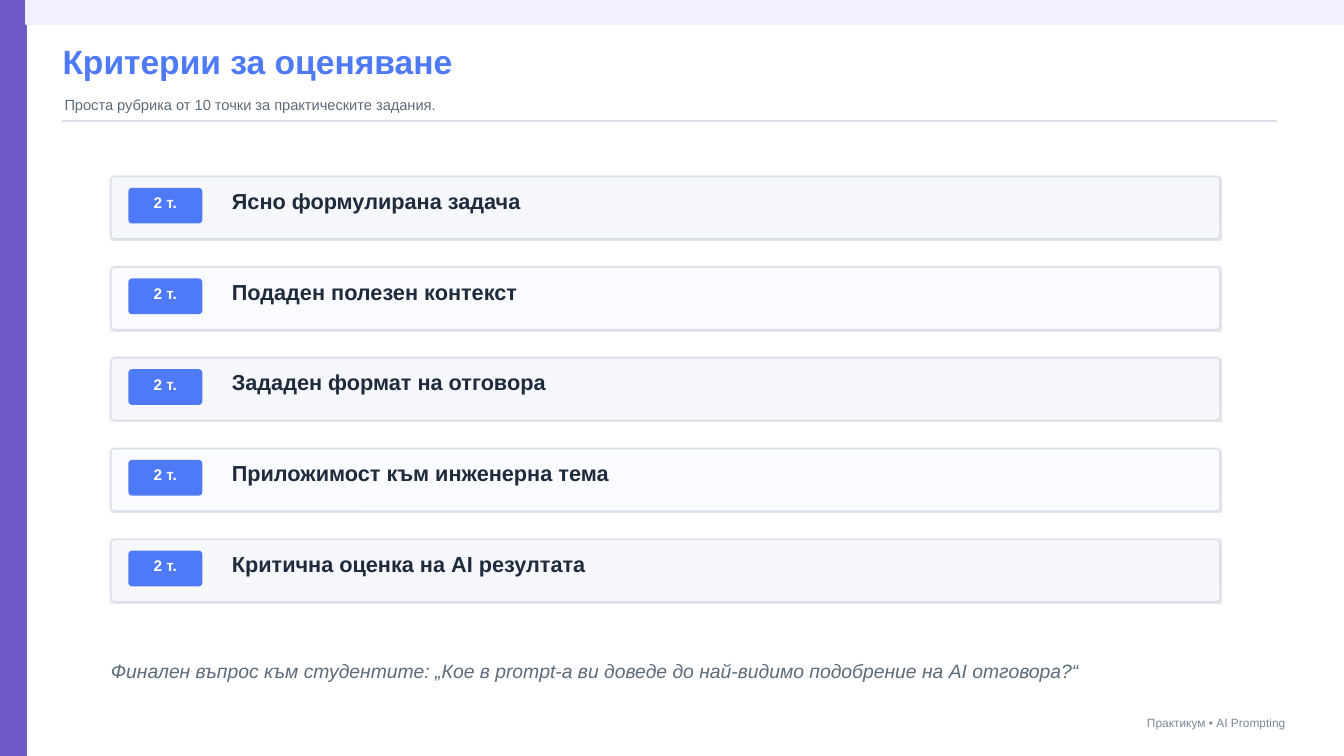
from lxml import etree
from pptx import Presentation
from pptx.dml.color import RGBColor
from pptx.enum.shapes import MSO_CONNECTOR, MSO_SHAPE
from pptx.enum.text import MSO_ANCHOR, MSO_AUTO_SIZE, PP_ALIGN
from pptx.oxml.ns import qn
from pptx.util import Inches, Pt

RECT, ROUND = MSO_SHAPE.RECTANGLE, MSO_SHAPE.ROUNDED_RECTANGLE
STRAIGHT = MSO_CONNECTOR.STRAIGHT
MIDDLE, FIXED = MSO_ANCHOR.MIDDLE, MSO_AUTO_SIZE.NONE
LEFT, CENTER, RIGHT = PP_ALIGN.LEFT, PP_ALIGN.CENTER, PP_ALIGN.RIGHT

BLUE, PURPLE, LILAC = "4E79F7", "6E58C6", "F4F0FF"
WHITE, INK, GRAY, PALE = "FFFFFF", "1E2B3C", "5C6B7A", "7A8796"
BORDER = "D9DFEA"
CARDS = ("F6F7FB", "FAFBFE")
CRITERIA = (
    "Ясно формулирана задача",
    "Подаден полезен контекст",
    "Зададен формат на отговора",
    "Приложимост към инженерна тема",
    "Критична оценка на AI резултата",
)
TOP, STEP = 1.75, 0.9


def rgb(code):
    return RGBColor.from_string(code)


class Deck:
    """Holds the font and the current slide."""

    def __init__(self, slide, font="Arial"):
        self.slide = slide
        self.font = font

    def fill_text(self, frame, text, size, color, align=LEFT, bold=False, italic=False):
        frame.margin_left = frame.margin_right = 0
        frame.margin_top = frame.margin_bottom = 0
        frame.word_wrap = True
        frame.auto_size = FIXED
        frame.vertical_anchor = MIDDLE
        frame.text = text
        para = frame.paragraphs[0]
        para.alignment = align
        font = para.font
        font.name, font.size = self.font, Pt(size)
        font.bold, font.italic = bold, italic
        font.color.rgb = rgb(color)

    def title(self, box, text, size, color):
        head = self.slide.shapes.title
        head.left, head.top, head.width, head.height = map(Inches, box)
        self.fill_text(head.text_frame, text, size, color, bold=True)

    def text(self, box, text, size, color, **style):
        area = self.slide.shapes.add_textbox(*map(Inches, box))
        self.fill_text(area.text_frame, text, size, color, **style)

    def block(self, box, fill, line=None, kind=RECT, round_by=None):
        shape = self.slide.shapes.add_shape(kind, *map(Inches, box))
        shape.shadow.inherit = False
        shape.fill.solid()
        shape.fill.fore_color.rgb = rgb(fill)
        shape.line.color.rgb = rgb(line or fill)
        shape.line.width = Pt(1)
        if round_by is not None:
            shape.adjustments[0] = round_by
        return shape

    def shade(self, shape):
        """Give the shape a faint shadow to the lower right."""
        effects = shape._element.spPr.find(qn("a:effectLst"))
        outer = etree.SubElement(
            effects, qn("a:outerShdw"), blurRad=str(Pt(0.5)), dist=str(Pt(0.2)),
            dir="2700000", algn="bl", rotWithShape="0")
        color = etree.SubElement(outer, qn("a:srgbClr"), val="000000")
        etree.SubElement(color, qn("a:alpha"), val="10000")

    def rule(self, ends, color, width):
        line = self.slide.shapes.add_connector(STRAIGHT, *map(Inches, ends))
        line.line.color.rgb = rgb(color)
        line.line.width = Pt(width)
        etree.SubElement(line._element.spPr, qn("a:effectLst"))

    def card(self, top, fill, points, label):
        back = self.block((1.1, top, 11, 0.62), fill, BORDER, ROUND, 0.065)
        self.shade(back)
        self.block((1.28, top + 0.12, 0.72, 0.34), BLUE, kind=ROUND, round_by=0.088)
        self.text((1.4, top + 0.21, 0.48, 0.1), points, 11, WHITE,
                  align=CENTER, bold=True)
        self.text((2.3, top + 0.18, 6.1, 0.12), label, 15.5, INK, bold=True)


def main():
    prs = Presentation()
    prs.slide_width, prs.slide_height = Inches(13.33), Inches(7.5)
    deck = Deck(prs.slides.add_slide(prs.slide_layouts[5]))

    deck.block((0, 0, 0.26, 7.5), PURPLE)
    deck.block((0.26, 0, 13.07, 0.24), LILAC)
    deck.title((0.62, 0.38, 9.3, 0.46), "Критерии за оценяване", 24, BLUE)
    deck.text((0.64, 0.93, 11, 0.22),
              "Проста рубрика от 10 точки за практическите задания.", 10.5, GRAY)
    deck.rule((0.62, 1.2, 12.67, 1.2), BORDER, 1.2)
    deck.text((10.25, 7.08, 2.5, 0.18), "Практикум • AI Prompting", 8.5, PALE,
              align=RIGHT)

    for i, label in enumerate(CRITERIA):
        deck.card(TOP + i * STEP, CARDS[i % 2], "2 т.", label)

    deck.text((1.1, 6.55, 10.7, 0.2),
              "Финален въпрос към студентите: „Кое в prompt-а ви доведе "
              "до най-видимо подобрение на AI отговора?“",
              13.8, GRAY, italic=True)
    prs.save("out.pptx")


if __name__ == "__main__":
    main()
